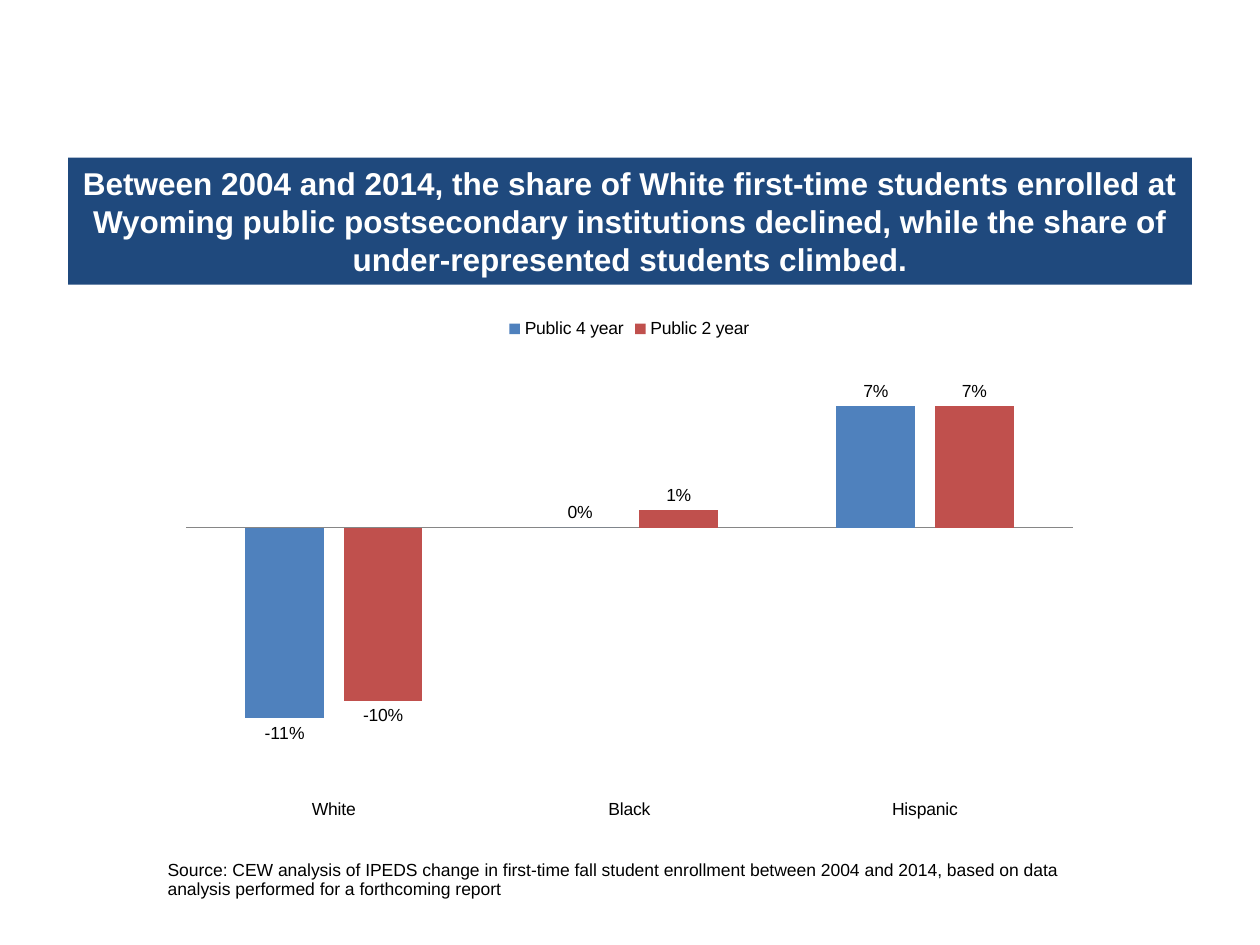
import pptx
import pptx.chart.data
import pptx.dml.color
import pptx.enum.chart
import pptx.enum.text
import pptx.util

Inches = pptx.util.Inches
RGBColor = pptx.dml.color.RGBColor
Chart = pptx.enum.chart
Text = pptx.enum.text

NAVY = RGBColor(0x1F, 0x49, 0x7D)
BLUE = RGBColor(0x4F, 0x81, 0xBD)
RED = RGBColor(0xC0, 0x50, 0x4D)
GRAY = RGBColor(0x86, 0x86, 0x86)
WHITE = RGBColor(0xFF, 0xFF, 0xFF)
BLACK = RGBColor(0, 0, 0)

TITLE = ("Between 2004 and 2014, the share of White first-time students "
         "enrolled at Wyoming public postsecondary institutions declined, "
         "while the share of under-represented students climbed.")
SOURCE = ("Source: CEW analysis of IPEDS change in first-time fall student "
          "enrollment between 2004 and 2014, based on data analysis "
          "performed for a forthcoming report")
GROUPS = ["White", "Black", "Hispanic"]
SHARES = [
    ("Public 4 year", (-0.11, 0, 0.07), BLUE),
    ("Public 2 year", (-0.1, 0.01, 0.07), RED),
]


def style(font, size=10, color=BLACK, bold=False):
    font.name = "Arial"
    font.size = pptx.util.Pt(size)
    font.bold = bold
    font.color.rgb = color


def write(frame, text, align=Text.PP_ALIGN.LEFT, **look):
    frame.word_wrap = True
    para = frame.paragraphs[0]
    para.alignment = align
    run = para.add_run()
    run.text = text
    style(run.font, **look)


class Deck:
    def __init__(self):
        self.show = pptx.Presentation()
        self.show.slide_width = Inches(10)
        self.show.slide_height = Inches(7.5)
        self.slide = self.show.slides.add_slide(self.show.slide_layouts[5])

    def title(self, text, box):
        shape = self.slide.shapes.title
        shape.left, shape.top, shape.width, shape.height = map(Inches, box)
        shape.fill.solid()
        shape.fill.fore_color.rgb = NAVY
        shape.text_frame.auto_size = Text.MSO_AUTO_SIZE.NONE
        write(shape.text_frame, text, align=Text.PP_ALIGN.CENTER,
              size=18, color=WHITE, bold=True)

    def table(self, text, box):
        table = self.slide.shapes.add_table(1, 1, *map(Inches, box)).table
        table.first_row = table.horz_banding = False
        cell = table.cell(0, 0)
        cell.fill.background()
        cell.margin_left = cell.margin_right = 0
        cell.margin_top = cell.margin_bottom = 0
        write(cell.text_frame, text)

    def chart(self, groups, rows, box):
        data = pptx.chart.data.CategoryChartData(number_format="0%")
        data.categories = groups
        for name, vals, _ in rows:
            data.add_series(name, vals)
        chart = self.slide.shapes.add_chart(
            Chart.XL_CHART_TYPE.COLUMN_CLUSTERED,
            *map(Inches, box), data).chart
        style(chart.font)
        chart.has_title = False
        chart.has_legend = True
        chart.legend.position = Chart.XL_LEGEND_POSITION.TOP
        chart.legend.include_in_layout = False
        self.axes(chart)
        plot = chart.plots[0]
        plot.gap_width = 150
        plot.overlap = -25
        plot.vary_by_categories = False
        for bar, (_, _, color) in zip(plot.series, rows):
            bar.invert_if_negative = False
            bar.format.fill.solid()
            bar.format.fill.fore_color.rgb = color
            tags = bar.data_labels
            tags.show_value = True
            tags.number_format = "0%"
            tags.number_format_is_linked = False
            tags.position = Chart.XL_LABEL_POSITION.OUTSIDE_END
            style(tags.font)

    def axes(self, chart):
        cat, val = chart.category_axis, chart.value_axis
        cat.tick_label_position = Chart.XL_TICK_LABEL_POSITION.LOW
        cat.major_tick_mark = Chart.XL_TICK_MARK.NONE
        cat.format.line.color.rgb = GRAY
        val.visible = False
        val.has_major_gridlines = False
        val.minimum_scale = -0.15
        val.maximum_scale = 0.1


def main():
    deck = Deck()
    deck.title(TITLE, (0.54, 1.25, 8.92, 1.01))
    deck.table(SOURCE, (1.33, 6.83, 7.42, 0.33))
    deck.chart(GROUPS, SHARES, (1.33, 2.42, 7.33, 4.17))
    deck.show.save("out.pptx")


if __name__ == "__main__":
    main()
